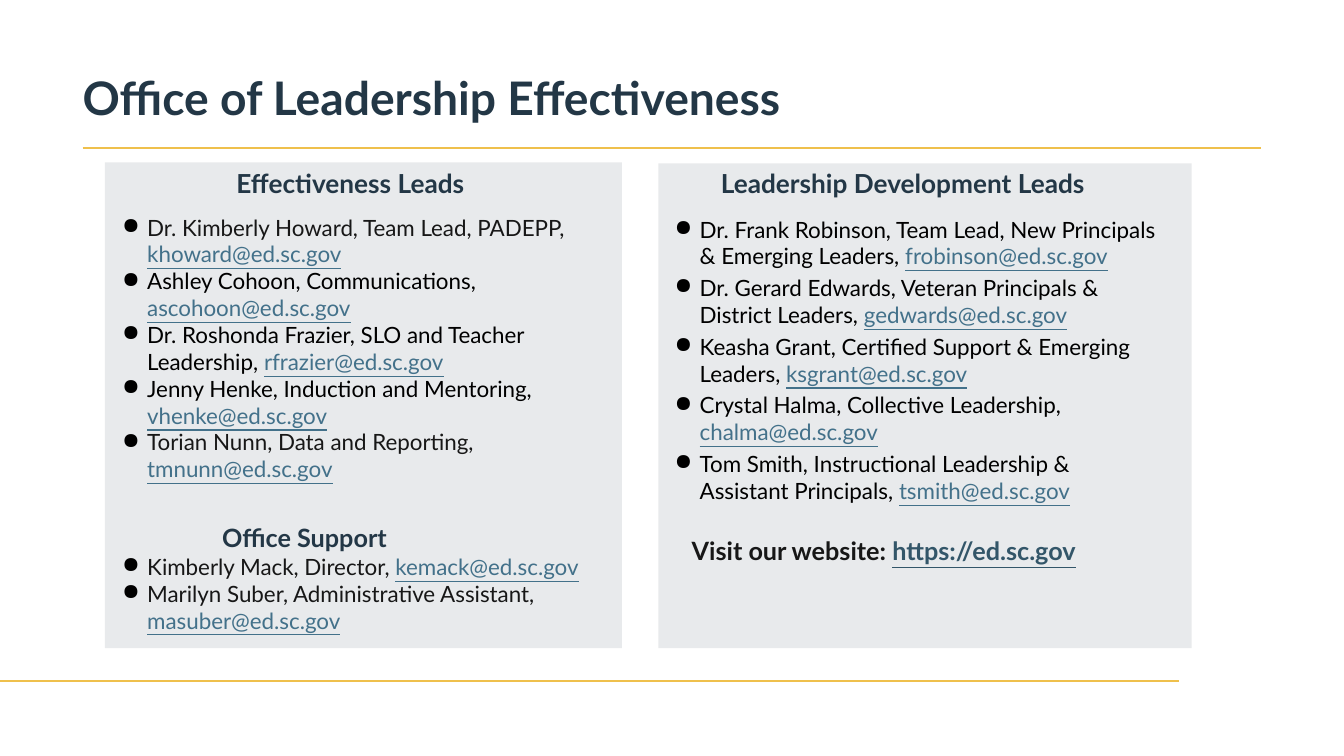
"""Build the Office of Leadership Effectiveness contact slide."""
from dataclasses import dataclass

from lxml.etree import SubElement
from pptx import Presentation
from pptx.dml.color import RGBColor
from pptx.enum.shapes import MSO_CONNECTOR as Connector, MSO_SHAPE as Preset
from pptx.enum.text import PP_ALIGN as Align
from pptx.oxml.ns import qn
from pptx.slide import Slide
from pptx.util import Inches, Pt

WIDTH, HEIGHT = Inches(13.33), Inches(7.5)
FONT = "Lato"
COLORS = {
    "navy": "233746", "gold": "EFC04C", "black": "000000",
    "ink": "171717", "link": "43718A", "site": "335669",
}


@dataclass
class Box:
    """Place and size in percent of the slide's width and height."""
    left: float
    top: float
    width: float
    height: float

    def lengths(self) -> tuple[int, int, int, int]:
        return (across(self.left), down(self.top),
                across(self.width), down(self.height))


@dataclass
class Line:
    """One paragraph: plain text, then an underlined address."""
    text: str
    address: str = ""
    color: str = "black"
    address_color: str = "link"
    size: float = 16
    bold: bool = False
    bullet: bool = True
    space_before: float | None = None


@dataclass
class Column:
    """A shaded panel with its heading and contact list."""
    panel: Box
    heading_box: Box
    heading: str
    list_box: Box
    lines: list[Line]
    indent: float
    space_before: float


def across(percent: float) -> int:
    return round(WIDTH * percent / 100)


def down(percent: float) -> int:
    return round(HEIGHT * percent / 100)


def rgb(name: str) -> RGBColor:
    return RGBColor.from_string(COLORS[name])


def add_bullet(paragraph, indent: float) -> None:
    properties = paragraph._p.get_or_add_pPr()
    properties.set("marL", str(Inches(indent)))
    properties.set("indent", str(Inches(-0.25)))
    color = SubElement(properties, qn("a:buClr"))
    SubElement(color, qn("a:srgbClr"), val=COLORS["black"])
    SubElement(properties, qn("a:buChar"), char="●")


def add_text(slide: Slide, box: Box, lines: list[Line], *, align: Align = Align.LEFT,
             line_spacing: float | None = None, indent: float = 0,
             space_before: float = 0) -> None:
    frame = slide.shapes.add_textbox(*box.lengths()).text_frame
    frame.word_wrap = True
    frame.margin_left = frame.margin_right = frame.margin_top = frame.margin_bottom = 0
    for index, line in enumerate(lines):
        paragraph = frame.add_paragraph() if index else frame.paragraphs[0]
        if line.bullet:
            add_bullet(paragraph, indent)
        elif indent:
            paragraph._p.get_or_add_pPr().set("marL", str(Inches(0.33)))
        paragraph.alignment = align
        if line_spacing:
            paragraph.line_spacing = Pt(line_spacing)
        if index:
            gap = space_before if line.space_before is None else line.space_before
            paragraph.space_before = Pt(gap)
        for text, color in ((line.text, line.color), (line.address, line.address_color)):
            if not text:
                continue
            run = paragraph.add_run()
            run.text = text
            run.font.name, run.font.size = FONT, Pt(line.size)
            run.font.bold = line.bold
            run.font.underline = text == line.address
            run.font.color.rgb = rgb(color)


def add_heading(slide: Slide, box: Box, text: str, *, size: float,
                align: Align = Align.CENTER, line_spacing: float | None = None) -> None:
    heading = Line(text, color="navy", size=size, bold=True, bullet=False)
    add_text(slide, box, [heading], align=align, line_spacing=line_spacing)


def add_rule(slide: Slide, start: float, end: float, top: float) -> None:
    rule = slide.shapes.add_connector(
        Connector.STRAIGHT, across(start), down(top), across(end), down(top))
    rule.line.color.rgb, rule.line.width = rgb("gold"), Pt(1.5)
    SubElement(rule._element.spPr, qn("a:effectLst"))


def add_panel(slide: Slide, box: Box) -> None:
    panel = slide.shapes.add_shape(Preset.RECTANGLE, *box.lengths())
    panel.shadow.inherit = False
    panel.line.fill.background()
    panel.fill.solid()
    panel.fill.fore_color.rgb = rgb("navy")
    color = panel._element.spPr.find(qn("a:solidFill")).find(qn("a:srgbClr"))
    SubElement(color, qn("a:alpha"), val="10000")


def add_column(slide: Slide, column: Column) -> None:
    add_panel(slide, column.panel)
    add_heading(slide, column.heading_box, column.heading, size=18.7, line_spacing=16)
    add_text(slide, column.list_box, column.lines, indent=column.indent,
             space_before=column.space_before)


EFFECTIVENESS = Column(
    Box(7.8, 21.47, 38.48, 64.27), Box(14.33, 23.33, 23.48, 3.2), "Effectiveness Leads",
    Box(9.08, 28.27, 37.21, 57.47),
    [
        Line("Dr. Kimberly Howard, Team Lead, PADEPP, ", "khoward@ed.sc.gov", "ink"),
        Line("Ashley Cohoon, Communications, ", "ascohoon@ed.sc.gov"),
        Line("Dr. Roshonda Frazier, SLO and Teacher Leadership, ", "rfrazier@ed.sc.gov"),
        Line("Jenny Henke, Induction and Mentoring, ", "vhenke@ed.sc.gov"),
        Line("Torian Nunn, Data and Reporting, ", "tmnunn@ed.sc.gov", "ink"),
        Line("Kimberly Mack, Director, ", "kemack@ed.sc.gov", "ink", space_before=50.4),
        Line("Marilyn Suber, Administrative Assistant, ", "masuber@ed.sc.gov", "ink"),
    ],
    indent=0.25, space_before=0)

DEVELOPMENT = Column(
    Box(48.99, 21.6, 39.68, 64.13), Box(52.36, 23.33, 29.63, 3.2),
    "Leadership Development Leads",
    Box(48.99, 28.53, 37.06, 51.73),
    [
        Line("Dr. Frank Robinson, Team Lead, New Principals & Emerging Leaders, ",
             "frobinson@ed.sc.gov"),
        Line("Dr. Gerard Edwards, Veteran Principals & District Leaders, ",
             "gedwards@ed.sc.gov"),
        Line("Keasha Grant, Certified Support & Emerging Leaders, ", "ksgrant@ed.sc.gov"),
        Line("Crystal Halma, Collective Leadership, ", "chalma@ed.sc.gov"),
        Line("Tom Smith, Instructional Leadership & Assistant Principals, ",
             "tsmith@ed.sc.gov"),
        Line("Visit our website: ", "https://ed.sc.gov", "ink", "site", size=18,
             bold=True, bullet=False, space_before=22.7),
    ],
    indent=0.41, space_before=3.5)


def main() -> None:
    presentation = Presentation()
    presentation.slide_width, presentation.slide_height = WIDTH, HEIGHT
    slide = presentation.slides.add_slide(presentation.slide_layouts[6])
    add_heading(slide, Box(6.15, 10.4, 87.7, 6.4), "Office of Leadership Effectiveness",
                size=33, align=Align.LEFT, line_spacing=33.3)
    add_rule(slide, 6.15, 93.85, 19.6)
    for column in (EFFECTIVENESS, DEVELOPMENT):
        add_column(slide, column)
    add_heading(slide, Box(11.4, 69.07, 22.51, 4.13), "Office Support", size=18)
    add_rule(slide, 0, 87.7, 90.13)
    presentation.save("out.pptx")


if __name__ == "__main__":
    main()
